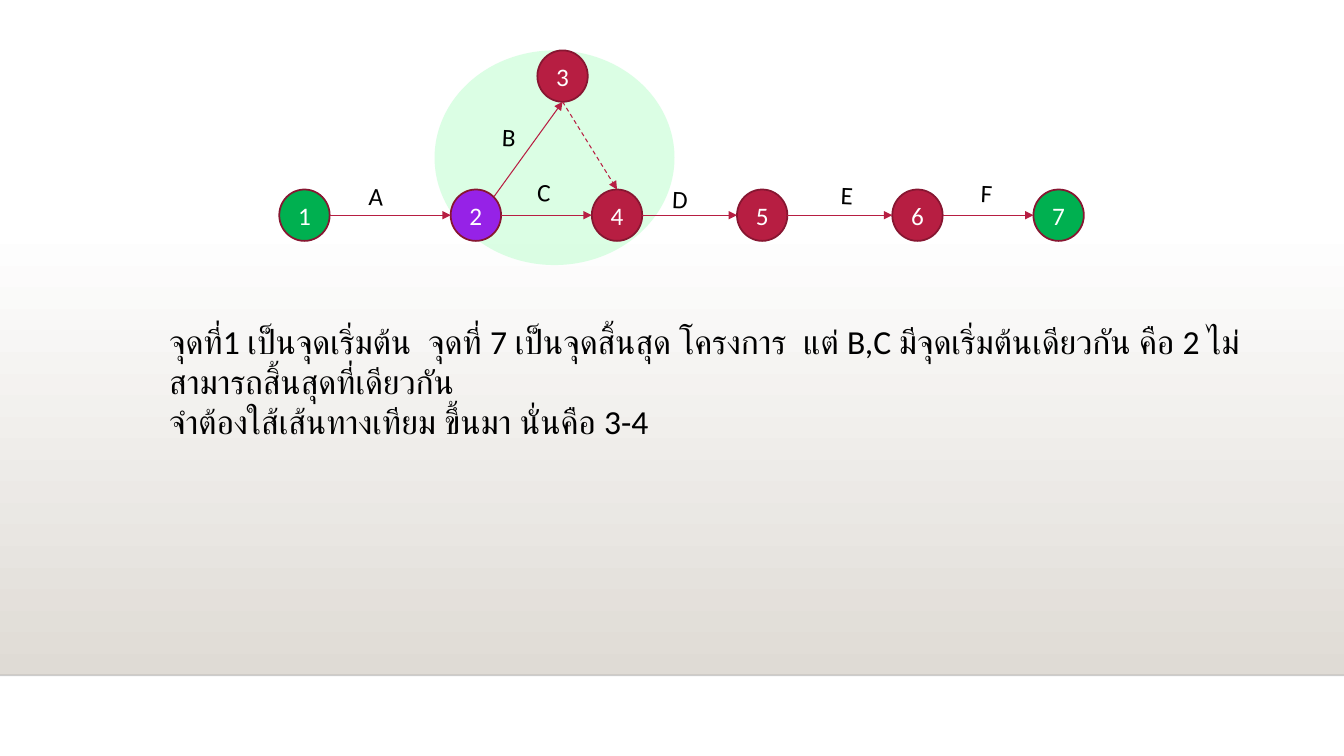
from lxml import etree
from pptx import Presentation
from pptx.dml.color import RGBColor
from pptx.enum import dml, shapes, text
from pptx.oxml import ns
from pptx.util import Inches, Pt

deck = Presentation()
deck.slide_width, deck.slide_height = Inches(13.33), Inches(7.5)
slide = deck.slides.add_slide(deck.slide_layouts[6])
drawing = slide.shapes

CRIMSON, GREEN, PURPLE = "B71E42", "00B050", "9622E7"


def write(shape, words, size=18, color="000000", align=text.PP_ALIGN.LEFT,
          anchor=text.MSO_ANCHOR.TOP):
    frame = shape.text_frame
    frame.word_wrap = True
    frame.vertical_anchor = anchor
    frame.text = words
    for paragraph in frame.paragraphs:
        paragraph.alignment = align
        paragraph.font.name = "Calibri"
        paragraph.font.size = Pt(size)
        paragraph.font.color.rgb = RGBColor.from_string(color)


def draw_line(start, end, color, width, dashed=False, arrow=True):
    line = drawing.add_connector(shapes.MSO_CONNECTOR.STRAIGHT,
                                 *[Inches(v) for v in (*start, *end)])
    line.line.color.rgb = RGBColor.from_string(color)
    line.line.width = Pt(width)
    if dashed:
        line.line.dash_style = dml.MSO_LINE.DASH
    if arrow:
        etree.SubElement(line.line._get_or_add_ln(), ns.qn("a:tailEnd"), type="triangle")
    etree.SubElement(line._element.spPr, ns.qn("a:effectLst"))
    return line


# Backdrop fading from white, with the floor edge below it
backdrop = drawing.add_shape(shapes.MSO_SHAPE.RECTANGLE, 0, Inches(2.21),
                             deck.slide_width, Inches(4.49))
backdrop.shadow.inherit = False
backdrop.line.fill.background()
backdrop.fill.gradient()
backdrop.fill.gradient_angle = 270
for stop, color, position in zip(backdrop.fill.gradient_stops, ("FFFFFF", "DFDBD5"), (0, 1)):
    stop.color.rgb = RGBColor.from_string(color)
    stop.position = position

floor_edge = draw_line((0, 6.7), (13.33, 6.7), "000001", 1, arrow=False)
edge_color = floor_edge._element.spPr.find(".//" + ns.qn("a:srgbClr"))
etree.SubElement(edge_color, ns.qn("a:alpha"), val="20000")

# Highlight behind the dummy activity
highlight = drawing.add_shape(shapes.MSO_SHAPE.OVAL, Inches(4.31), Inches(0.5),
                              Inches(2.38), Inches(2.13))
highlight.shadow.inherit = False
highlight.line.fill.background()
highlight.fill.solid()
highlight.fill.fore_color.rgb = RGBColor.from_string("B8FECA")
highlight_color = highlight._element.spPr.find(".//" + ns.qn("a:srgbClr"))
etree.SubElement(highlight_color, ns.qn("a:alpha"), val="50000")

# Events: left edge, top edge, colour
NODE_W, NODE_H, ROW_TOP = 0.5, 0.51, 1.88
events = {
    1: (2.77, ROW_TOP, GREEN),
    2: (4.47, ROW_TOP, PURPLE),
    3: (5.33, 0.5, CRIMSON),
    4: (5.87, ROW_TOP, CRIMSON),
    5: (7.31, ROW_TOP, CRIMSON),
    6: (8.85, ROW_TOP, CRIMSON),
    7: (10.25, ROW_TOP, GREEN),
}
for number, (left, top, color) in events.items():
    event = drawing.add_shape(shapes.MSO_SHAPE.OVAL, Inches(left), Inches(top),
                              Inches(NODE_W), Inches(NODE_H))
    event.shadow.inherit = False
    event.fill.solid()
    event.fill.fore_color.rgb = RGBColor.from_string(color)
    event.line.color.rgb = RGBColor.from_string("871631")
    event.line.width = Pt(1.25)
    write(event, str(number), color="FFFFFF", align=text.PP_ALIGN.CENTER,
          anchor=text.MSO_ANCHOR.MIDDLE)

# Activities along the row
row_middle = ROW_TOP + NODE_H / 2
row = [1, 2, 4, 5, 6, 7]
for before, after in zip(row, row[1:]):
    draw_line((events[before][0] + NODE_W, row_middle), (events[after][0], row_middle),
              CRIMSON, 0.75)

# Activity B and the dashed dummy activity
event_3_foot = (events[3][0] + NODE_W / 2, events[3][1] + NODE_H)
event_4_head = (events[4][0] + NODE_W / 2, ROW_TOP)
draw_line((4.9, 1.95), event_3_foot, CRIMSON, 0.75)
draw_line(event_3_foot, event_4_head, CRIMSON, 0.75, dashed=True)

# Activity letters
letters = {"A": (3.56, 1.75), "B": (4.88, 1.16), "C": (5.23, 1.71),
           "D": (6.57, 1.78), "E": (8.24, 1.74), "F": (9.63, 1.72)}
for letter, (left, top) in letters.items():
    label = drawing.add_textbox(Inches(left), Inches(top), Inches(0.44), Inches(0.4))
    label.rotation = 2.6
    write(label, letter)

# Explanation
explanation = drawing.add_textbox(Inches(1.58), Inches(3.13), Inches(10.88), Inches(0.91))
write(explanation,
      "จุดที่1 เป็นจุดเริ่มต้น  จุดที่ 7 เป็นจุดสิ้นสุด โครงการ  แต่ B,C มีจุดเริ่มต้นเดียวกัน คือ 2 "
      "ไม่สามารถสิ้นสุดที่เดียวกัน\n"
      "จำต้องใส้เส้นทางเทียม ขึ้นมา นั่นคือ 3-4", size=24)

deck.save("out.pptx")
